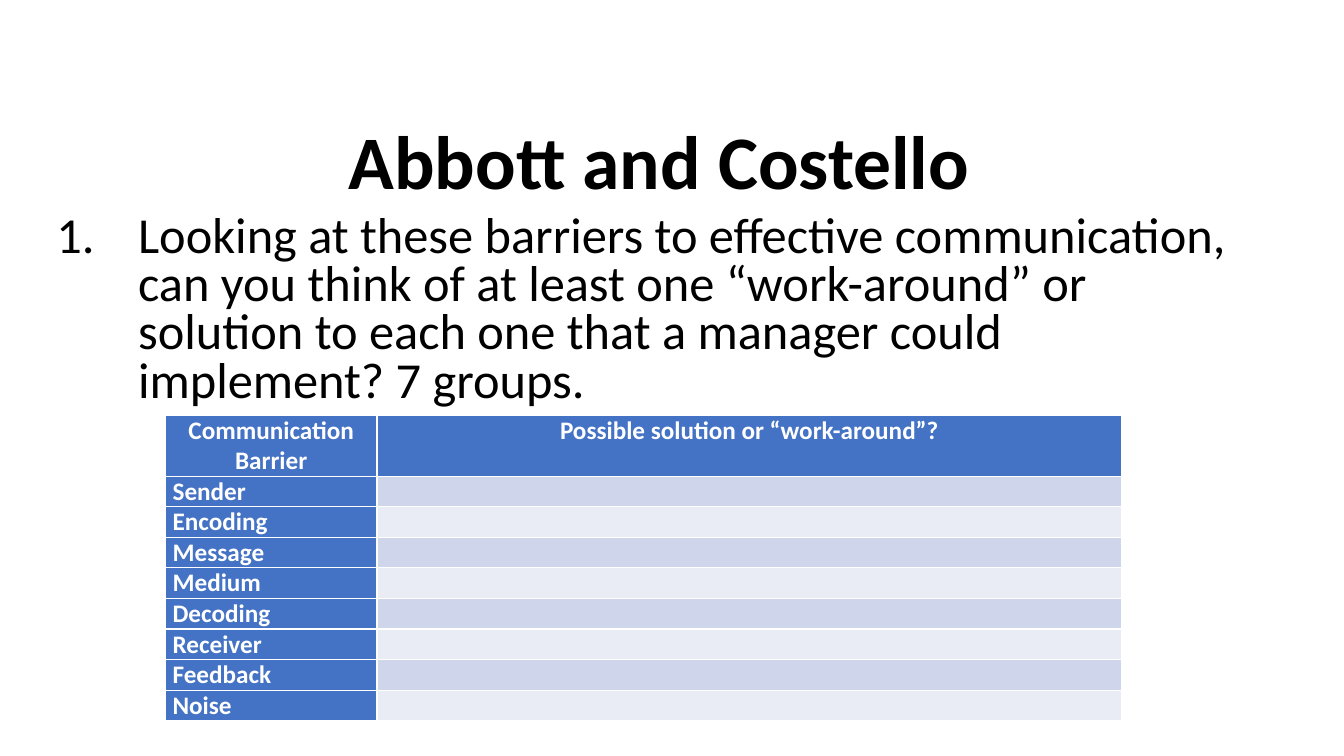
"""Build a slide with a question about communication barriers and a table to fill in."""
from lxml import etree
from pptx import Presentation
from pptx import util as u
from pptx.dml.color import RGBColor
from pptx.enum import text
from pptx.oxml.ns import qn


def paint(target, colour):
    if hasattr(target, "solid"):
        target.solid()
        target = target.fore_color
    else:
        target = target.color
    target.rgb = RGBColor.from_string(colour)


def write(paragraph, words, size, colour, bold, **layout):
    run = paragraph.add_run()
    run.text = words
    for name, value in {"name": "Calibri", "size": u.Pt(size), "bold": bold}.items():
        setattr(run.font, name, value)
    paint(run.font, colour)
    for name, value in layout.items():
        setattr(paragraph, name, value)


deck = Presentation()
deck.slide_width, deck.slide_height = u.Cm(33.87), u.Cm(19.05)
slide = deck.slides.add_slide(deck.slide_layouts[5])

heading = slide.shapes.title
heading_format = {"left": u.Cm(1.88), "top": u.Cm(2.87),
                  "width": u.Cm(29.46), "height": u.Cm(2.44)}
for name, value in heading_format.items():
    setattr(heading, name, value)
heading.text_frame.auto_size = text.MSO_AUTO_SIZE.NONE
heading.text_frame.vertical_anchor = text.MSO_ANCHOR.BOTTOM
write(heading.text_frame.paragraphs[0], "Abbott and Costello", 54, "000000", True,
      alignment=text.PP_ALIGN.CENTER, line_spacing=0.9)

question = slide.shapes.add_textbox(u.Cm(1.17), u.Cm(5.28), u.Cm(30.2), u.Cm(5.23))
question.text_frame.word_wrap = True
question_line = question.text_frame.paragraphs[0]
write(question_line,
      "Looking at these barriers to effective communication, can you think of at least "
      "one “work-around” or solution to each one that a manager could implement? 7 groups.",
      36, "000000", False, line_spacing=0.8, space_before=u.Pt(10))
numbering = question_line._p.get_or_add_pPr()
numbering.set("marL", str(u.Cm(2.06)))
numbering.set("indent", str(-u.Cm(2.06)))
etree.SubElement(numbering, qn("a:buFont"), typeface="+mj-lt")
etree.SubElement(numbering, qn("a:buAutoNum"), type="arabicPeriod")

headers = ["Communication Barrier", "Possible solution or “work-around”?"]
barriers = ["Sender", "Encoding", "Message", "Medium",
            "Decoding", "Receiver", "Feedback", "Noise"]
rows = [headers] + [[barrier, ""] for barrier in barriers]
row_height = 0.77

worksheet = slide.shapes.add_table(
    len(rows), len(headers), u.Cm(4.17), u.Cm(10.46),
    u.Cm(24.1), u.Cm(row_height * (len(rows) + 1))).table
worksheet.first_col = True
for column, width in zip(worksheet.columns, [5.33, 18.77]):
    column.width = u.Cm(width)

cell_margins = {"margin_left": u.Cm(0.18), "margin_right": u.Cm(0.18),
                "margin_top": 0, "margin_bottom": 0}
for r, row in enumerate(rows):
    worksheet.rows[r].height = u.Cm(row_height if r else 2 * row_height)
    for c, words in enumerate(row):
        cell = worksheet.cell(r, c)
        for name, value in cell_margins.items():
            setattr(cell, name, value)
        band = "CFD5EA" if r % 2 else "E9EBF5"
        paint(cell.fill, "4472C4" if r == 0 or c == 0 else band)
        if words:
            write(cell.text_frame.paragraphs[0], words, 18, "FFFFFF", True,
                  alignment=text.PP_ALIGN.LEFT if r else text.PP_ALIGN.CENTER)

deck.save("out.pptx")
